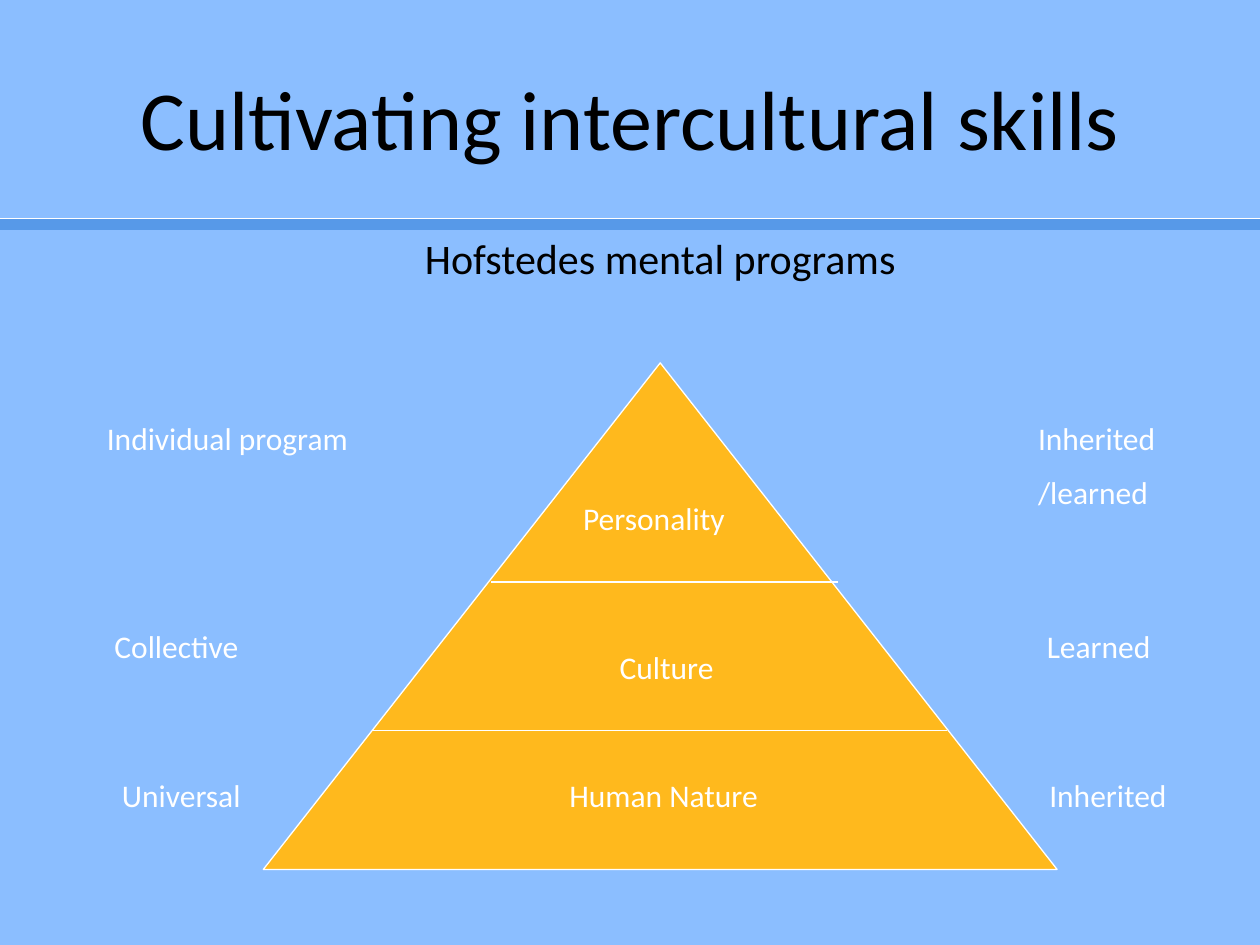
from dataclasses import dataclass

from lxml import etree
from pptx import Presentation
from pptx.dml.color import RGBColor
from pptx.enum.shapes import MSO_CONNECTOR, MSO_SHAPE
from pptx.enum.text import MSO_ANCHOR, PP_ALIGN
from pptx.oxml.ns import qn
from pptx.util import Inches, Pt

STRAIGHT = MSO_CONNECTOR.STRAIGHT
TRIANGLE = MSO_SHAPE.ISOSCELES_TRIANGLE
MIDDLE = MSO_ANCHOR.MIDDLE
TOP = MSO_ANCHOR.TOP
LEFT = PP_ALIGN.LEFT
CENTER = PP_ALIGN.CENTER


@dataclass(frozen=True)
class Theme:
    font: str = "Calibri"
    background: str = "8BBEFF"
    band: str = "5799E8"
    pyramid: str = "FFB91D"
    light: str = "FFFFFF"
    dark: str = "000000"
    title_size: float = 48
    subtitle_size: float = 24
    label_size: float = 18
    label_gap: float = 9
    outline: float = 0.75
    hairline: float = 0.5
    band_width: float = 7


def rgb(color):
    return RGBColor.from_string(color)


def write_text(frame, text, *, font, size, color, align=LEFT, anchor=TOP, gap=0):
    frame.word_wrap = True
    frame.vertical_anchor = anchor
    for index, line in enumerate(text.split("\n")):
        paragraph = frame.add_paragraph() if index else frame.paragraphs[0]
        paragraph.text = line
        paragraph.alignment = align
        paragraph.space_before = Pt(gap if index else 0)
        paragraph.font.name = font
        paragraph.font.size = Pt(size)
        paragraph.font.bold = False
        paragraph.font.color.rgb = rgb(color)


class SlideBuilder:
    def __init__(self, slide, theme):
        self.slide = slide
        self.theme = theme
        fill = slide.background.fill
        fill.solid()
        fill.fore_color.rgb = rgb(theme.background)

    def title(self, text, left, top, width, height):
        title = self.slide.shapes.title
        title.left, title.top = Inches(left), Inches(top)
        title.width, title.height = Inches(width), Inches(height)
        write_text(title.text_frame, text, font=self.theme.font,
                   size=self.theme.title_size, color=self.theme.dark,
                   align=CENTER, anchor=MIDDLE)

    def text(self, text, left, top, width, height, **text_format):
        box = self.slide.shapes.add_textbox(
            Inches(left), Inches(top), Inches(width), Inches(height))
        write_text(box.text_frame, text, font=self.theme.font, **text_format)

    def label(self, text, left, top, width=2, height=0.4):
        self.text(text, left, top, width, height, size=self.theme.label_size,
                  color=self.theme.light, gap=self.theme.label_gap)

    def rule(self, start, end, y, color, weight):
        line = self.slide.shapes.add_connector(
            STRAIGHT, Inches(start), Inches(y), Inches(end), Inches(y))
        line.line.color.rgb = rgb(color)
        line.line.width = Pt(weight)
        etree.SubElement(line._element.spPr, qn("a:effectLst"))

    def pyramid(self, left, top, width, height):
        pyramid = self.slide.shapes.add_shape(
            TRIANGLE, Inches(left), Inches(top), Inches(width), Inches(height))
        pyramid.shadow.inherit = False
        pyramid.fill.solid()
        pyramid.fill.fore_color.rgb = rgb(self.theme.pyramid)
        pyramid.line.color.rgb = rgb(self.theme.light)
        pyramid.line.width = Pt(self.theme.outline)


def main():
    theme = Theme()
    presentation = Presentation()
    presentation.slide_width = Inches(10)
    presentation.slide_height = Inches(7.5)
    title_only = presentation.slide_layouts[5]
    builder = SlideBuilder(presentation.slides.add_slide(title_only), theme)

    builder.rule(0, 10, 1.78, theme.band, theme.band_width)
    builder.rule(0, 10, 1.73, theme.light, theme.hairline)
    builder.title("Cultivating intercultural skills", 0.5, 0.3, 9, 1.25)
    builder.text("Hofstedes mental programs", 0.74, 1.8, 9, 0.5,
                 size=theme.subtitle_size, color=theme.dark, align=CENTER)

    builder.pyramid(2.09, 2.88, 6.3, 4.02)
    for start, end, y in [(2.95, 7.52, 5.8), (3.9, 6.65, 4.62)]:
        builder.rule(start, end, y, theme.light, theme.outline)

    levels = [("Personality", 4.53, 3.91), ("Culture", 4.82, 5.09),
              ("Human Nature", 4.42, 6.11)]
    for level, left, top in levels:
        builder.label(level, left, top)

    scopes = [("Individual program", 0.75, 3.28), ("Collective", 0.81, 4.93),
              ("Universal", 0.87, 6.11)]
    for scope, left, top in scopes:
        builder.label(scope, left, top, width=2.4)

    builder.label("Inherited\n/learned", 8.14, 3.28, width=1.5, height=0.85)
    builder.label("Learned", 8.21, 4.93, width=1.5)
    builder.label("Inherited", 8.23, 6.11, width=1.5)

    presentation.save("out.pptx")


if __name__ == "__main__":
    main()
